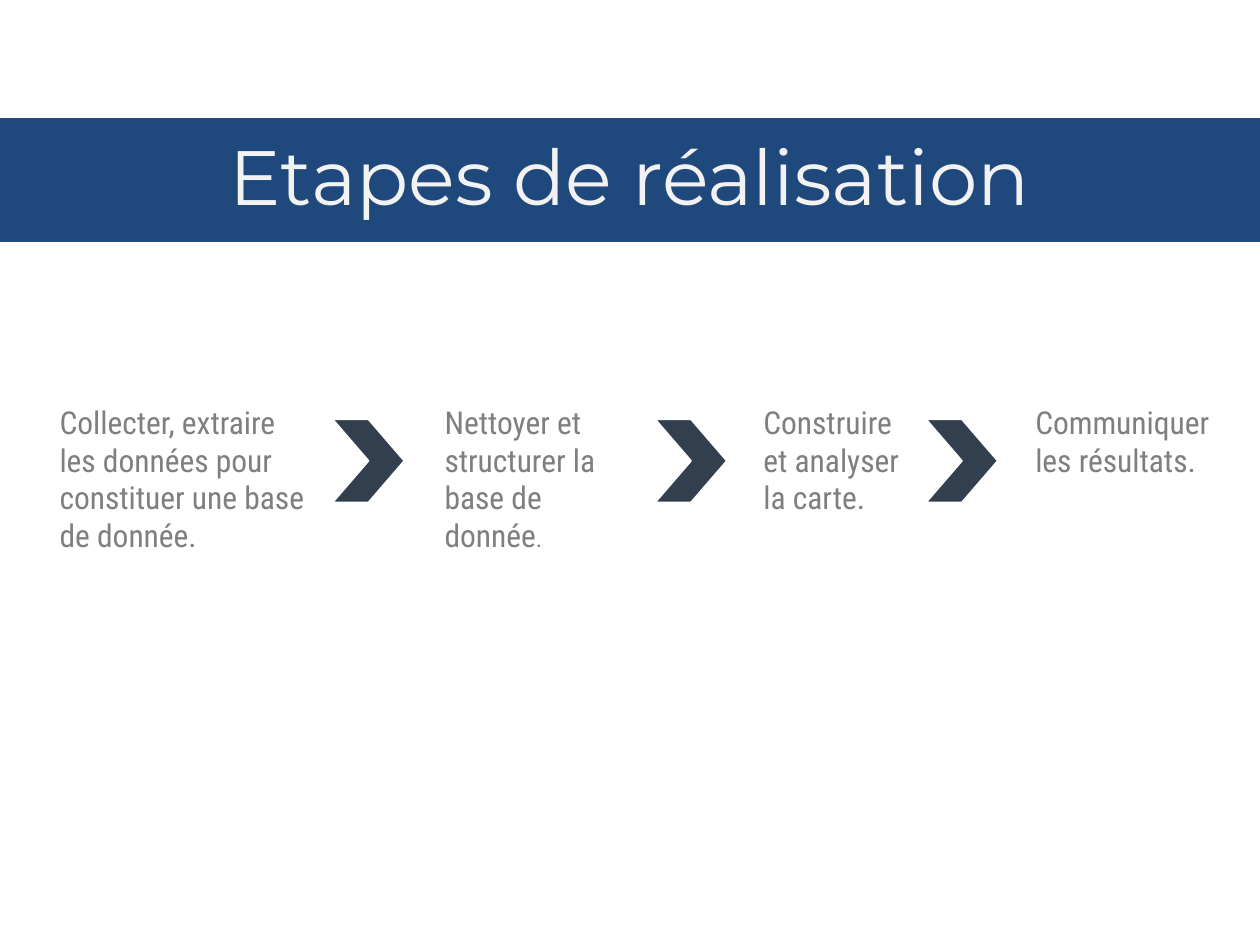
import pptx
import pptx.util
import pptx.dml.color
import pptx.enum.shapes
import pptx.enum.text
from dataclasses import dataclass

Pt = pptx.util.Pt
Text = pptx.enum.text


@dataclass(frozen=True)
class Theme:
    band: str = "1F497D"
    title: str = "F2F2F2"
    body: str = "7F7F7F"
    arrow: str = "323F4F"
    edge: str = "FFFFFF"
    head_font: str = "Montserrat"
    body_font: str = "Roboto Condensed"
    head_size: float = 44
    body_size: float = 18
    dot_size: float = 13.5


class Deck:
    def __init__(self, theme):
        self.theme = theme
        self.file = pptx.Presentation()
        self.file.slide_width = Pt(720)
        self.file.slide_height = Pt(540)
        # Title Only layout
        self.slide = self.file.slides.add_slide(self.file.slide_layouts[5])

    def paint(self, fill, color):
        fill.solid()
        fill.fore_color.rgb = pptx.dml.color.RGBColor.from_string(color)

    def inset(self, frame):
        frame.word_wrap = True
        frame.margin_left = frame.margin_right = Pt(5.4)
        frame.margin_top = frame.margin_bottom = Pt(2.7)

    def run(self, para, text, font, size, color):
        run = para.add_run()
        run.text = text
        run.font.name = font
        run.font.size = Pt(size)
        self.paint(run.font.fill, color)

    def title(self, text, top, height):
        look = self.theme
        band = self.slide.shapes.title
        band.left, band.top = Pt(0), Pt(top)
        band.width, band.height = self.file.slide_width, Pt(height)
        self.paint(band.fill, look.band)
        frame = band.text_frame
        self.inset(frame)
        frame.auto_size = Text.MSO_AUTO_SIZE.NONE
        frame.vertical_anchor = Text.MSO_ANCHOR.MIDDLE
        para = frame.paragraphs[0]
        para.alignment = Text.PP_ALIGN.CENTER
        para.line_spacing = 0.9
        self.run(para, text, look.head_font, look.head_size, look.title)

    def step(self, runs, left, top, width, height):
        look = self.theme
        box = self.slide.shapes.add_textbox(
            Pt(left), Pt(top), Pt(width), Pt(height))
        frame = box.text_frame
        self.inset(frame)
        frame.auto_size = Text.MSO_AUTO_SIZE.SHAPE_TO_FIT_TEXT
        for text, size in runs:
            self.run(frame.paragraphs[0], text, look.body_font, size, look.body)

    def arrow(self, left, top, width, height):
        shape = self.slide.shapes.add_shape(
            pptx.enum.shapes.MSO_SHAPE.CHEVRON,
            Pt(left), Pt(top), Pt(width), Pt(height))
        shape.shadow.inherit = False
        shape.adjustments[0] = 0.5
        self.paint(shape.fill, self.theme.arrow)
        self.paint(shape.line.fill, self.theme.edge)
        shape.line.width = Pt(1)


def main():
    theme = Theme()
    deck = Deck(theme)
    size = theme.body_size

    # Title band
    deck.title("Etapes de réalisation", 67.5, 70.8)

    # Steps: runs, left, width, height
    steps = [
        ([("Collecter, extraire les données pour constituer une base de donnée.",
           size)], 28.6, 152.6, 92.9),
        ([("Nettoyer et structurer la base de donnée", size),
          (".", theme.dot_size)], 248.6, 111.6, 92.9),
        ([("Construire et analyser la carte.", size)], 430.8, 97.9, 70.6),
        ([("Communiquer les résultats.", size)], 586.2, 119.5, 49),
    ]
    for runs, left, width, height in steps:
        deck.step(runs, left, 227.5, width, height)

    # Arrows between the steps
    for left in (190.1, 374.4, 529.2):
        deck.arrow(left, 239.6, 41, 47.5)

    deck.file.save("out.pptx")


if __name__ == "__main__":
    main()
